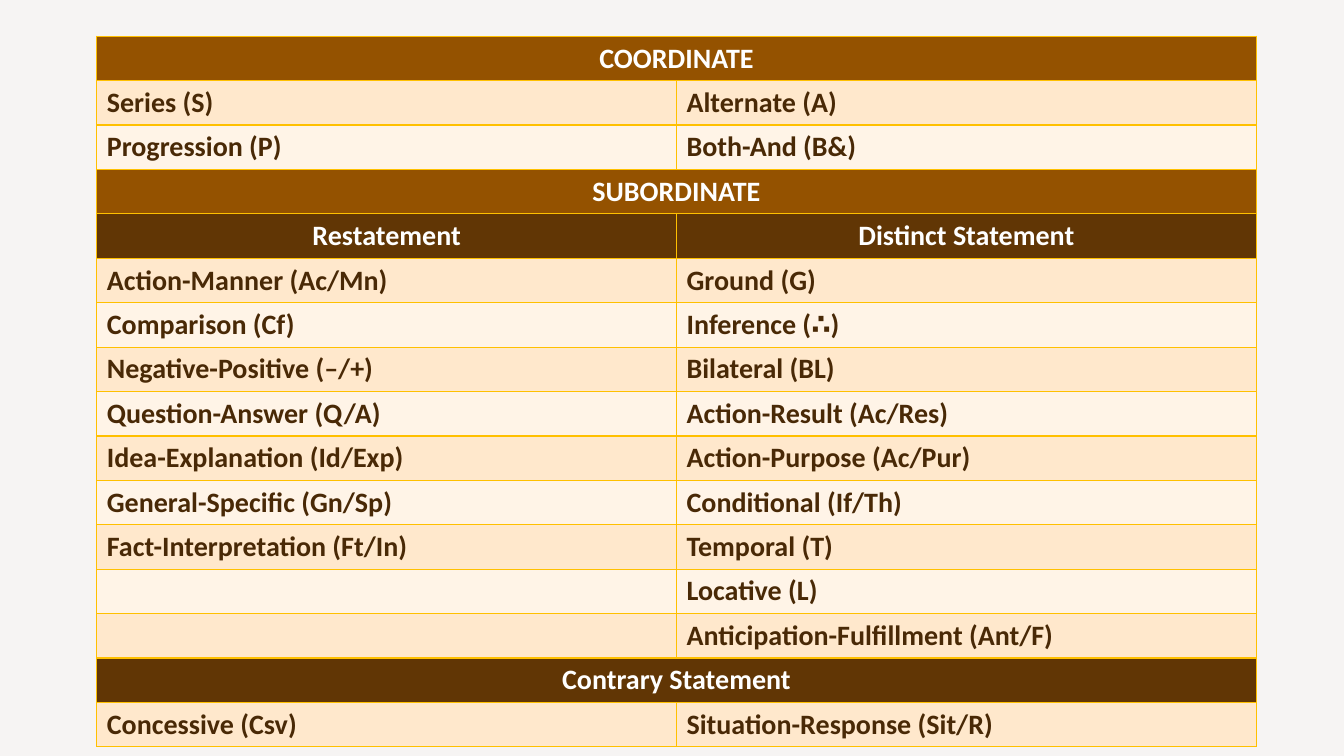
from dataclasses import dataclass

from lxml.etree import SubElement
from pptx import Presentation
from pptx.dml.color import RGBColor
from pptx.enum.text import PP_ALIGN
from pptx.oxml.ns import qn
from pptx.table import Table, _Cell
from pptx.util import Inches, Pt

COLORS = {
    "background": "F6F4F3",
    "border": "FFC000",
    "group": "945200",
    "subgroup": "613605",
    "band_dark": "FFE8CC",
    "band_light": "FFF4E7",
    "heading_text": "FFFFFF",
    "relation_text": "492906",
}
ROW_HEIGHT = 0.44
COLUMN_WIDTH = 5.75


@dataclass(frozen=True)
class Section:
    """A heading row, one label per column or one for both, and its relations."""
    headings: tuple[str, ...]
    fill: str
    relations: tuple[tuple[str, str], ...] = ()


SECTIONS = (
    Section(("COORDINATE",), "group", (
        ("Series (S)", "Alternate (A)"),
        ("Progression (P)", "Both-And (B&)"),
    )),
    Section(("SUBORDINATE",), "group"),
    Section(("Restatement", "Distinct Statement"), "subgroup", (
        ("Action-Manner (Ac/Mn)", "Ground (G)"),
        ("Comparison (Cf)", "Inference (∴)"),
        ("Negative-Positive (–/+)", "Bilateral (BL)"),
        ("Question-Answer (Q/A)", "Action-Result (Ac/Res)"),
        ("Idea-Explanation (Id/Exp)", "Action-Purpose (Ac/Pur)"),
        ("General-Specific (Gn/Sp)", "Conditional (If/Th)"),
        ("Fact-Interpretation (Ft/In)", "Temporal (T)"),
        ("", "Locative (L)"),
        ("", "Anticipation-Fulfillment (Ant/F)"),
    )),
    Section(("Contrary Statement",), "subgroup", (
        ("Concessive (Csv)", "Situation-Response (Sit/R)"),
    )),
)


def color(name: str) -> RGBColor:
    return RGBColor.from_string(COLORS[name])


def style_cell(cell: _Cell, fill: str) -> None:
    """Outline the cell on all sides, then fill it."""
    properties = cell._tc.get_or_add_tcPr()
    for side in ("a:lnL", "a:lnR", "a:lnT", "a:lnB"):
        line = SubElement(properties, qn(side), w=str(Pt(1)))
        solid = SubElement(line, qn("a:solidFill"))
        SubElement(solid, qn("a:srgbClr"), val=COLORS["border"])
    cell.fill.solid()
    cell.fill.fore_color.rgb = color(fill)


def write_cell(cell: _Cell, text: str, text_color: str, align: PP_ALIGN) -> None:
    if not text:
        return
    paragraph = cell.text_frame.paragraphs[0]
    paragraph.alignment = align
    run = paragraph.add_run()
    run.text = text
    run.font.name = "Calibri"
    run.font.size = Pt(20)
    run.font.bold = True
    run.font.color.rgb = color(text_color)


def write_row(table: Table, row: int, texts: tuple[str, ...], fill: str,
              text_color: str, align: PP_ALIGN) -> None:
    table.rows[row].height = Inches(ROW_HEIGHT)
    for column in range(2):
        style_cell(table.cell(row, column), fill)
    if len(texts) == 1:
        table.cell(row, 0).merge(table.cell(row, 1))
    for column, text in enumerate(texts):
        write_cell(table.cell(row, column), text, text_color, align)


def main() -> None:
    presentation = Presentation()
    presentation.slide_width = Inches(13.33)
    presentation.slide_height = Inches(7.5)
    slide = presentation.slides.add_slide(presentation.slide_layouts[6])

    # Background
    slide.background.fill.solid()
    slide.background.fill.fore_color.rgb = color("background")

    # Table of relations
    row_count = sum(1 + len(section.relations) for section in SECTIONS)
    relations_table = slide.shapes.add_table(
        row_count, 2, Inches(0.96), Inches(0.36),
        Inches(2 * COLUMN_WIDTH), Inches(row_count * ROW_HEIGHT)).table
    relations_table.horz_banding = False
    relations_table.first_row = False

    # Each section restarts the banding under its heading
    row = 0
    for section in SECTIONS:
        write_row(relations_table, row, section.headings, section.fill,
                  "heading_text", PP_ALIGN.CENTER)
        for index, pair in enumerate(section.relations):
            band = "band_light" if index % 2 else "band_dark"
            write_row(relations_table, row + 1 + index, pair, band,
                      "relation_text", PP_ALIGN.LEFT)
        row += 1 + len(section.relations)

    presentation.save("out.pptx")


if __name__ == "__main__":
    main()
